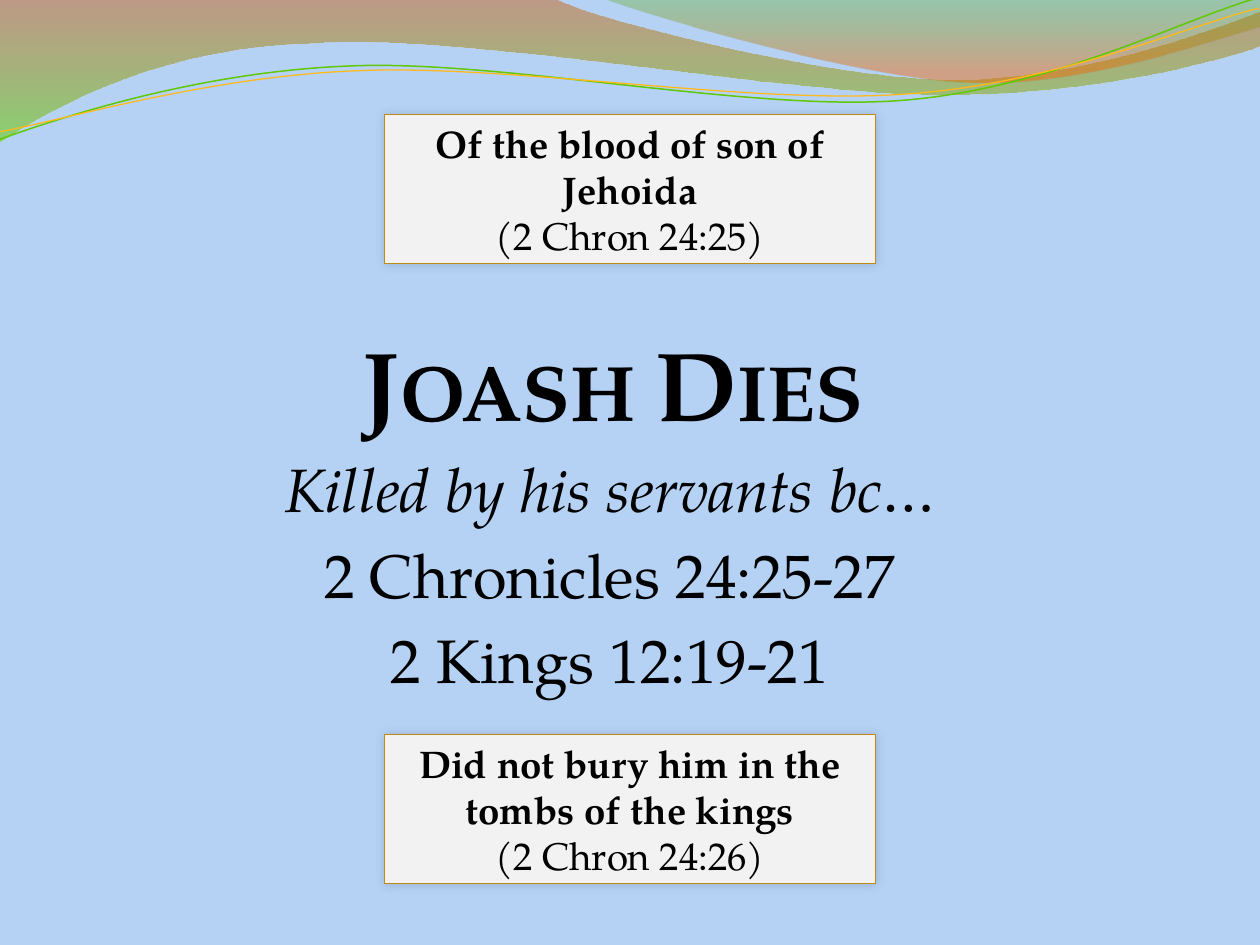
from lxml import etree
from pptx import Presentation
from pptx import util as u
from pptx.dml.color import RGBColor
from pptx.enum import shapes, text
from pptx.oxml.ns import qn

PX = 9144  # 100 px to the inch
FONT = "TeX Gyre Pagella"
SKY = RGBColor(0xB5, 0xD2, 0xF5)
BLACK = RGBColor(0, 0, 0)
PALE = RGBColor(0xF2, 0xF2, 0xF2)
GOLD = RGBColor(0xBF, 0x8A, 0x13)
RUST = RGBColor(0xC9, 0x56, 0x00)
LIME = RGBColor(0x63, 0xD2, 0x00)
GREEN = RGBColor(0x50, 0xAB, 0x00)
ORANGE = RGBColor(0xF0, 0x67, 0x00)
LEAF = RGBColor(0x60, 0xC8, 0x04)
AMBER = RGBColor(0xFF, 0xB9, 0x1D)

deck = Presentation()
deck.slide_width, deck.slide_height = 1000 * PX, 750 * PX
slide = deck.slides.add_slide(deck.slide_layouts[5])
slide.background.fill.solid()
slide.background.fill.fore_color.rgb = SKY


def trace(start, parts, close):
    """Draw an outline; a part is a line's end (2 values) or a cubic curve (6)."""
    pen = slide.shapes.build_freeform(*start, scale=PX)
    pen.add_line_segments([part[i:i + 2] for part in parts
                           for i in range(0, len(part), 2)], close=close)
    shape = pen.convert_to_shape()
    shape.shadow.inherit = False
    lines = iter(shape._element.spPr.findall(".//" + qn("a:lnTo")))
    for part in parts:
        first = next(lines)
        if len(part) == 6:  # three points become one curve
            first.tag = qn("a:cubicBezTo")
            for _ in range(2):
                extra = next(lines)
                first.append(extra[0])
                extra.getparent().remove(extra)
    return shape


def write(para, words, size, bold=False, italic=False):
    para.text = words
    para.alignment = text.PP_ALIGN.CENTER
    font = para.font
    font.name, font.size = FONT, u.Pt(size)
    font.bold, font.italic = bold, italic
    font.color.rgb = BLACK


# Shaded waves: start, parts, gradient stops (place, colour, opacity %)
waves = [
    ((0, 0),
     [(440, -1), (476, 17, 664, 63, 758, 63), (853, 63, 958, 26, 1000, 9),
      (1001, 36), (983, 44, 870, 76, 746, 75), (622, 75, 382, 28, 257, 34),
      (129, 36, 46, 83, -1, 113)],
     [(0, RUST, 45), (1, LIME, 55)]),
    ((479, -1),
     [(509, 11, 682, 62, 769, 65), (856, 69, 961, 32, 1000, 21), (1000, 0)],
     [(0, GREEN, 30), (0.8, ORANGE, 45)]),
]
for start, parts, stops in waves:
    wave = trace(start, parts, True)
    wave.line.fill.background()
    wave.fill.gradient()
    wave.fill.gradient_angle = 270
    for stop, (place, color, _) in zip(wave.fill.gradient_stops, stops):
        stop.position, stop.color.rgb = place, color
    tints = wave._element.spPr.findall(".//" + qn("a:srgbClr"))
    for tint, (_, _, alpha) in zip(tints, stops):
        etree.SubElement(tint, qn("a:alpha")).set("val", str(alpha * 1000))

# Thin curves, tilted a little
curves = [
    ((-2, 87), [(47, 72, 158, 41, 277, 42), (396, 42, 591, 93, 712, 90),
                (832, 87, 940, 36, 1000, 22)], LEAF, 0.85),
    ((-2, 81), [(46, 75, 164, 45, 283, 46), (403, 46, 596, 88, 716, 85),
                (835, 83, 942, 42, 1001, 30)], AMBER, 0.75),
]
for start, parts, color, width in curves:
    curve = trace(start, parts, False)
    curve.rotation = 357.3
    curve.fill.background()
    curve.line.color.rgb, curve.line.width = color, u.Pt(width)

# Title and the lines below it
title = slide.shapes.title
verses = slide.shapes.add_textbox(0, 0, PX, PX)
for box, top, high, inset, right, anchor in (
        (title, 150, 200, 0, 2, text.MSO_ANCHOR.BOTTOM),
        (verses, 353, 192, 5, 7, text.MSO_ANCHOR.TOP)):
    box.left, box.top, box.width, box.height = (
        58 * PX, top * PX, 859 * PX, high * PX)
    frame = box.text_frame
    frame.word_wrap, frame.auto_size = True, text.MSO_AUTO_SIZE.NONE
    frame.vertical_anchor = anchor
    frame.margin_left, frame.margin_right = 0, right * PX
    frame.margin_top = frame.margin_bottom = inset * PX

head = title.text_frame.paragraphs[0]
write(head, "Joash Dies", 56, bold=True)
head.runs[0]._r.get_or_add_rPr().set("cap", "small")

frame = verses.text_frame
for i, words in enumerate(("Killed by his servants bc…",
                           "2 Chronicles 24:25-27", "2 Kings 12:19-21")):
    para = frame.add_paragraph() if i else frame.paragraphs[0]
    write(para, words, 35, italic=i == 0)
    para.space_before = u.Pt(7)

# Framed reasons above and below
for top, reason, verse in (
        (91, "Of the blood of son of Jehoida", "(2 Chron 24:25)"),
        (583, "Did not bury him in the tombs of the kings", "(2 Chron 24:26)")):
    card = slide.shapes.add_shape(shapes.MSO_SHAPE.RECTANGLE, 305 * PX,
                                  top * PX, 390 * PX, 118 * PX)
    card.fill.solid()
    card.fill.fore_color.rgb = PALE
    card.line.color.rgb, card.line.width = GOLD, u.Pt(0.75)
    card.shadow.inherit = False
    glow = etree.SubElement(card._element.spPr.find(qn("a:effectLst")),
                            qn("a:outerShdw"), blurRad=str(u.Pt(6)), dist="0",
                            dir="18900000", rotWithShape="0")
    tint = etree.SubElement(glow, qn("a:srgbClr"), val=str(BLACK))
    etree.SubElement(tint, qn("a:alpha"), val="15000")
    frame = card.text_frame
    frame.word_wrap = True
    frame.vertical_anchor = text.MSO_ANCHOR.MIDDLE
    write(frame.paragraphs[0], reason, 22, bold=True)
    write(frame.add_paragraph(), verse, 22)

deck.save("out.pptx")
